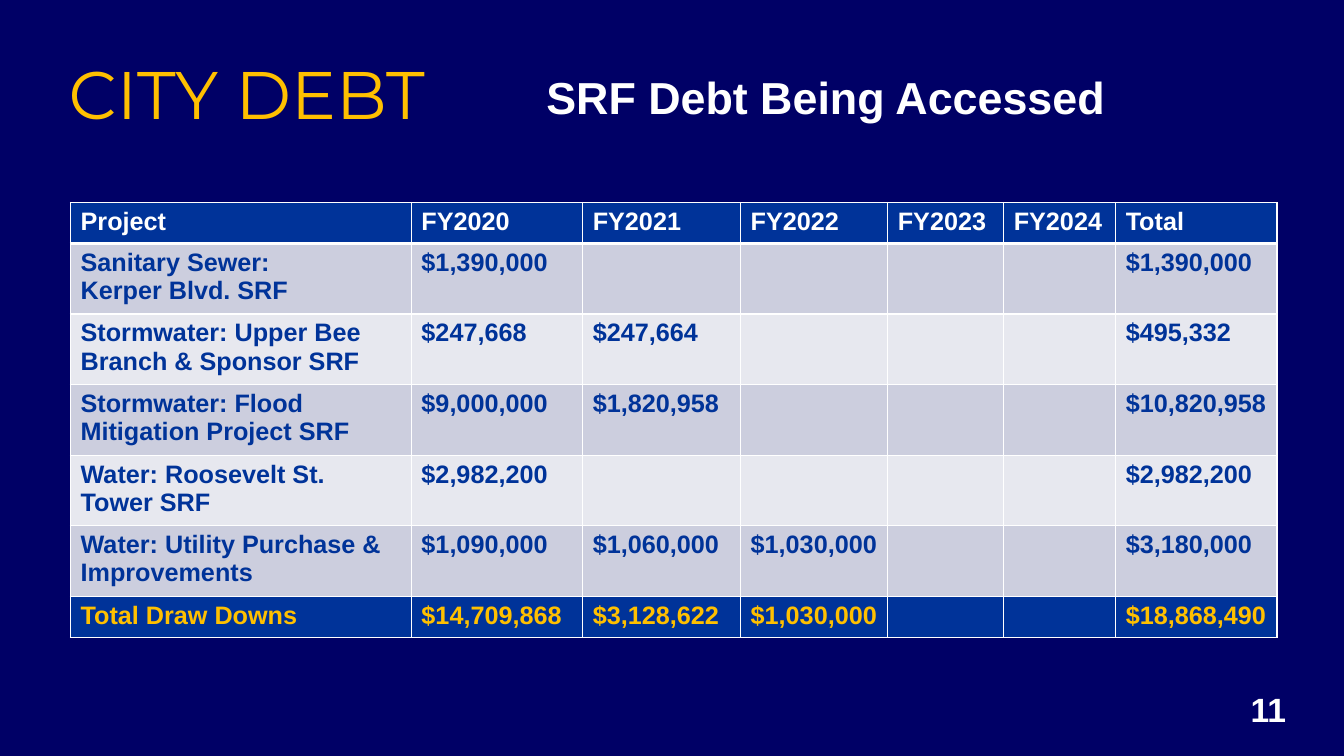
import pptx
import pptx.util
import pptx.dml.color
import pptx.enum.text
import pptx.oxml.ns
import lxml.etree

WIDE, HIGH = 13.33, 7.5
HUES = {
    "navy": "000066", "blue": "003399", "gold": "FFC000",
    "white": "FFFFFF", "dark": "CCCEDE", "light": "E7E8EF",
}
# Shares of the slide, in percent
COLS = [25.36, 12.75, 11.75, 10.95, 8.63, 8.33, 12]
LINE, PAIR = 5.4, 9.34
DEBT = [
    ["Project", "FY2020", "FY2021", "FY2022", "FY2023", "FY2024", "Total"],
    ["Sanitary Sewer:\nKerper Blvd. SRF", "$1,390,000", "", "", "", "", "$1,390,000"],
    ["Stormwater: Upper Bee Branch & Sponsor SRF", "$247,668", "$247,664", "", "", "",
     "$495,332"],
    ["Stormwater: Flood Mitigation Project SRF", "$9,000,000", "$1,820,958", "", "", "",
     "$10,820,958"],
    ["Water: Roosevelt St. Tower SRF", "$2,982,200", "", "", "", "", "$2,982,200"],
    ["Water: Utility Purchase & Improvements", "$1,090,000", "$1,060,000", "$1,030,000",
     "", "", "$3,180,000"],
    ["Total Draw Downs", "$14,709,868", "$3,128,622", "$1,030,000", "", "",
     "$18,868,490"],
]


def across(share):
    return pptx.util.Inches(WIDE * share / 100)


def down(share):
    return pptx.util.Inches(HIGH * share / 100)


def color(name):
    return pptx.dml.color.RGBColor.from_string(HUES[name])


def write(frame, text, size, hue, bold=True, face="Arial"):
    """Fill the first paragraph, one run for each line of text."""
    para = frame.paragraphs[0]
    for index, line in enumerate(text.split("\n")):
        if index:
            para.add_line_break()
        run = para.add_run()
        run.text = line
        run.font.size = pptx.util.Pt(size)
        run.font.name = face
        run.font.bold = bold
        run.font.color.rgb = color(hue)
    return para


def add_title(slide, text):
    title = slide.shapes.title
    title.left, title.top = across(4.35), down(6.27)
    title.width, title.height = across(91.3), down(11.87)
    frame = title.text_frame
    frame.auto_size = pptx.enum.text.MSO_AUTO_SIZE.NONE
    frame.vertical_anchor = pptx.enum.text.MSO_ANCHOR.MIDDLE
    para = write(frame, text, 48, "gold", False, "Montserrat")
    para.alignment = pptx.enum.text.PP_ALIGN.LEFT


def add_label(slide, text, left, top, width, height, size):
    box = slide.shapes.add_textbox(across(left), down(top), across(width), down(height))
    box.text_frame.word_wrap = True
    return write(box.text_frame, text, size, "white")


def add_edge(cell, side, width):
    props = cell._tc.get_or_add_tcPr()
    name = pptx.oxml.ns.qn
    edge = lxml.etree.SubElement(props, name("a:ln" + side), w=str(pptx.util.Pt(width)))
    fill = lxml.etree.SubElement(edge, name("a:solidFill"))
    lxml.etree.SubElement(fill, name("a:srgbClr"), val=HUES["white"])


def style(row, last):
    """Give the fill and text colours of a table row."""
    if row == 0:
        return "blue", "white"
    if row == last:
        return "blue", "gold"
    return ("dark" if row % 2 else "light"), "blue"


def add_grid(slide, data):
    last = len(data) - 1
    tall = [LINE] + [PAIR] * (last - 1) + [LINE]
    table = slide.shapes.add_table(len(data), len(COLS), across(5.25), down(26.8),
                                   across(sum(COLS)), down(sum(tall))).table
    for column, share in zip(table.columns, COLS):
        column.width = across(share)
    for row, texts in enumerate(data):
        table.rows[row].height = down(tall[row])
        back, ink = style(row, last)
        for col, text in enumerate(texts):
            cell = table.cell(row, col)
            for side in "LRTB":
                thick = (row, side) in [(0, "B"), (1, "T")]
                add_edge(cell, side, 3 if thick else 1)
            cell.fill.solid()
            cell.fill.fore_color.rgb = color(back)
            if text:
                write(cell.text_frame, text, 18, ink)


def main():
    deck = pptx.Presentation()
    deck.slide_width, deck.slide_height = across(100), down(100)
    slide = deck.slides.add_slide(deck.slide_layouts[5])
    slide.background.fill.solid()
    slide.background.fill.fore_color.rgb = color("navy")
    add_title(slide, "CITY DEBT")
    add_grid(slide, DEBT)
    add_label(slide, "SRF Debt Being Accessed", 39.91, 8.53, 46.14, 8.53, 32)
    page = add_label(slide, "11", 90.62, 90.53, 7.5, 6.67, 24)
    page.alignment = pptx.enum.text.PP_ALIGN.CENTER
    deck.save("out.pptx")


if __name__ == "__main__":
    main()
